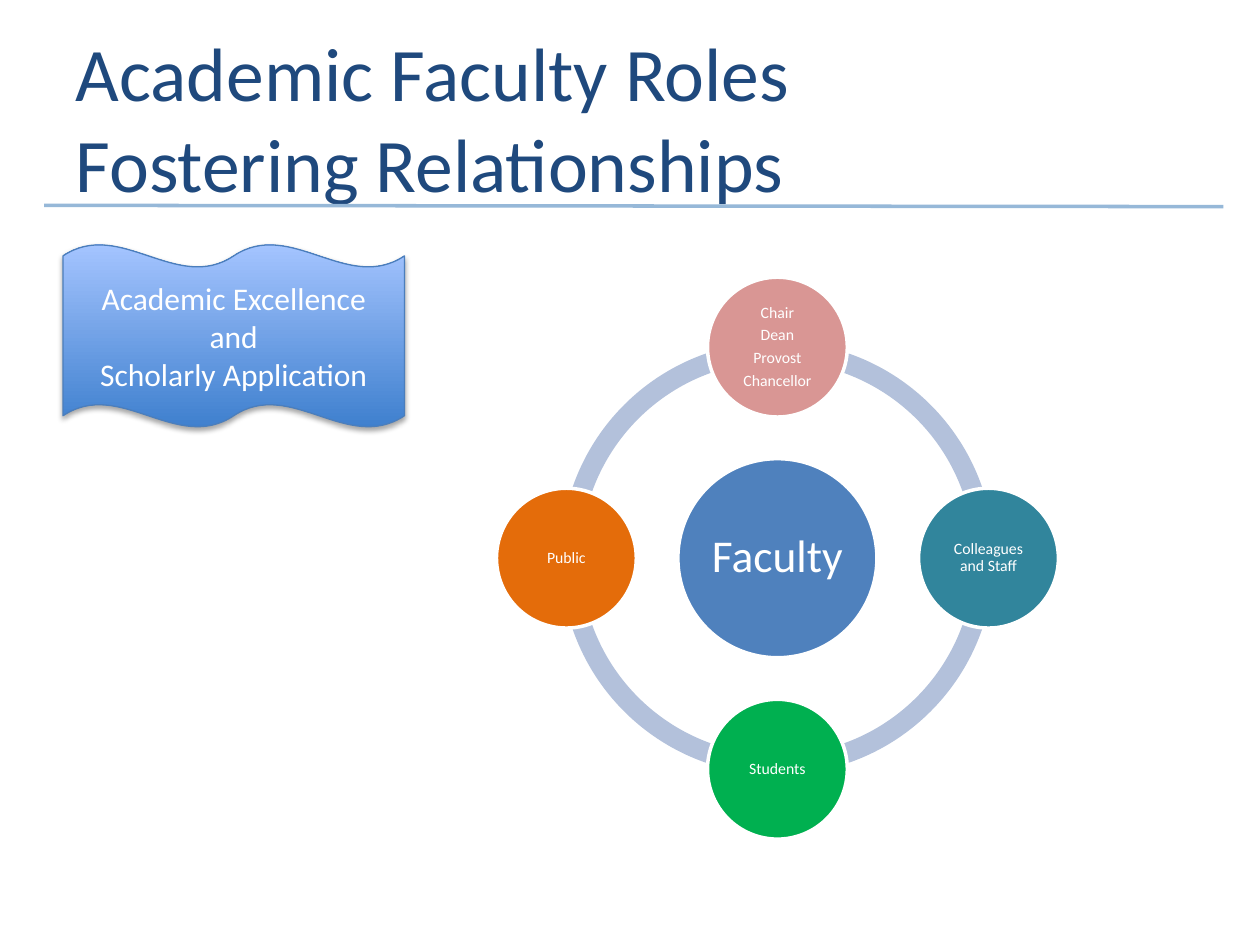
import math
from dataclasses import dataclass

from lxml import etree
from pptx import Presentation
from pptx import util as u
from pptx.dml.color import RGBColor
from pptx.enum import shapes, text
from pptx.oxml.ns import qn

Inches, Pt = u.Inches, u.Pt
KIND = shapes.MSO_SHAPE


@dataclass(frozen=True)
class Theme:
    font: str = "Calibri"
    title: str = "1F497D"
    rule: str = "96B8D8"
    white: str = "FFFFFF"
    ring: str = "B3C1DB"
    hub: str = "4F81BD"
    lead: str = "D99694"
    peer: str = "31859C"
    pupil: str = "00B050"
    public: str = "E46C0A"
    deep: str = "3F80CE"
    pale: str = "A4C4FF"
    edge: str = "4B7EBC"
    shade: str = "000000"
    head_size: float = 43.2
    hub_size: float = 26
    wave_size: float = 18
    node_size: float = 9


T = Theme()


def rgb(code):
    return RGBColor.from_string(code)


def add_run(para, words, size, color):
    run = para.add_run()
    run.text = words
    run.font.name = T.font
    run.font.size = Pt(size)
    run.font.color.rgb = rgb(color)


def write(shape, lines, size, tight=False):
    frame = shape.text_frame
    frame.word_wrap = True
    frame.vertical_anchor = text.MSO_ANCHOR.MIDDLE
    for i, words in enumerate(lines):
        para = frame.paragraphs[0] if i == 0 else frame.add_paragraph()
        para.alignment = text.PP_ALIGN.CENTER
        if tight:
            para.line_spacing = 0.9
            if i < len(lines) - 1:
                para.space_after = Pt(0.35 * size)
        add_run(para, words, size, T.white)


def add_shape(slide, kind, box):
    shape = slide.shapes.add_shape(kind, *map(Inches, box))
    shape.shadow.inherit = False
    return shape


def add_rule(slide, start, end):
    rule = slide.shapes.add_connector(
        shapes.MSO_CONNECTOR.STRAIGHT, *map(Inches, start + end))
    rule.line.color.rgb = rgb(T.rule)
    rule.line.width = Pt(2)
    etree.SubElement(rule._element.spPr, qn("a:effectLst"))


def add_title(slide, box, lines):
    title = slide.shapes.title
    title.left, title.top, title.width, title.height = map(Inches, box)
    frame = title.text_frame
    frame.auto_size = text.MSO_AUTO_SIZE.NONE
    frame.vertical_anchor = text.MSO_ANCHOR.MIDDLE
    para = frame.paragraphs[0]
    para.alignment = text.PP_ALIGN.LEFT
    for i, words in enumerate(lines):
        if i:
            para.add_line_break()
        add_run(para, words, T.head_size, T.title)


def add_disc(slide, mid, size, color, lines, points):
    x, y = mid
    disc = add_shape(slide, KIND.OVAL, (x - size / 2, y - size / 2, size, size))
    disc.fill.solid()
    disc.fill.fore_color.rgb = rgb(color)
    disc.line.color.rgb = rgb(T.white)
    disc.line.width = Pt(2)
    frame = disc.text_frame
    frame.margin_left = frame.margin_right = Inches(0.01)
    frame.margin_top = frame.margin_bottom = Inches(0.01)
    write(disc, lines, points, tight=True)


def add_cycle(slide, box, hub, nodes):
    left, top, width, height = box
    x, y = left + width / 2, top + height / 2
    ring, node = 3.44, 1.11
    orbit = (width - node) / 2
    for start in range(0, 360, 90):
        arc = add_shape(slide, KIND.BLOCK_ARC,
                        (x - ring / 2, y - ring / 2, ring, ring))
        arc.adjustments[0] = start * 0.6
        arc.adjustments[1] = (start + 90) % 360 * 0.6
        arc.adjustments[2] = 0.046
        arc.fill.solid()
        arc.fill.fore_color.rgb = rgb(T.ring)
        arc.line.fill.background()
    add_disc(slide, (x, y), 1.58, T.hub, [hub], T.hub_size)
    for i, (color, lines) in enumerate(nodes):
        turn = math.tau * i / len(nodes)
        mid = (x + orbit * math.sin(turn), y - orbit * math.cos(turn))
        add_disc(slide, mid, node, color, lines, T.node_size)


def add_wave(slide, box, lines):
    wave = add_shape(slide, KIND.DOUBLE_WAVE, box)
    wave.fill.gradient()
    wave.fill.gradient_angle = 90
    for stop, color in zip(wave.fill.gradient_stops, (T.deep, T.pale)):
        stop.color.rgb = rgb(color)
    wave.line.color.rgb = rgb(T.edge)
    wave.line.width = Pt(0.75)
    glow = wave._element.spPr.find(qn("a:effectLst"))
    cast = etree.SubElement(
        glow, qn("a:outerShdw"), blurRad=str(Pt(3.1)), dist=str(Pt(1.8)),
        dir="5400000", rotWithShape="0")
    tint = etree.SubElement(cast, qn("a:srgbClr"), val=T.shade)
    etree.SubElement(tint, qn("a:alpha"), val="35000")
    write(wave, lines, T.wave_size)


def main():
    deck = Presentation()
    deck.slide_width, deck.slide_height = Inches(10), Inches(7.5)
    slide = deck.slides.add_slide(deck.slide_layouts[5])
    add_rule(slide, (0.35, 1.63), (9.71, 1.64))
    add_title(slide, (0.5, 0.3, 9, 1.25),
              ["Academic Faculty Roles", "Fostering Relationships"])
    add_cycle(slide, (3.94, 2.2, 4.46, 4.46), "Faculty", [
        (T.lead, ["Chair", "Dean", "Provost", "Chancellor"]),
        (T.peer, ["Colleagues and Staff"]),
        (T.pupil, ["Students"]),
        (T.public, ["Public"]),
    ])
    add_wave(slide, (0.5, 1.94, 2.71, 1.45),
             ["Academic Excellence", "and", "Scholarly Application"])
    deck.save("out.pptx")


if __name__ == "__main__":
    main()
